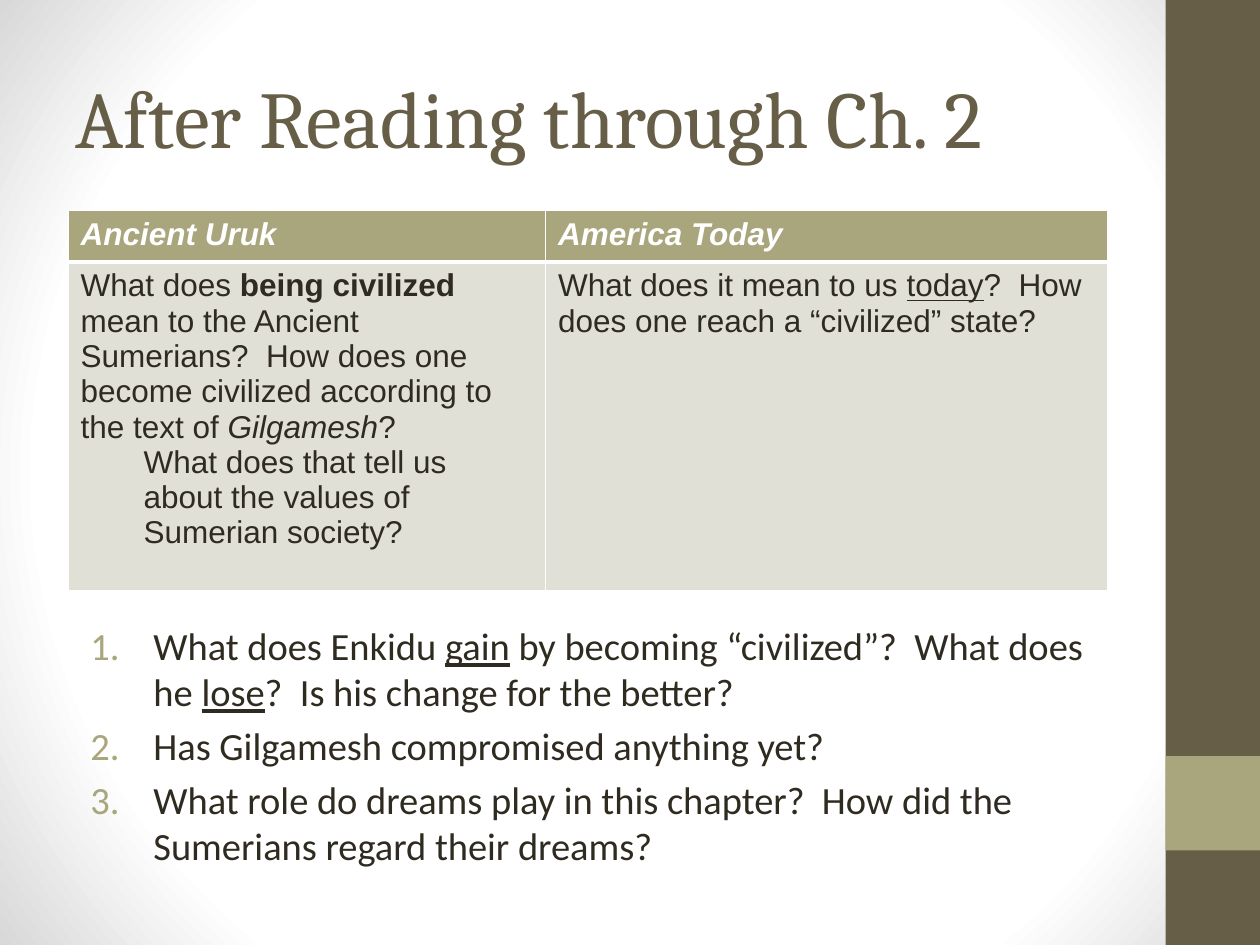
"""Build the reading-questions slide: a comparison table above a numbered list."""
from lxml import etree
from pptx import Presentation
from pptx.dml.color import RGBColor
from pptx.enum.shapes import MSO_SHAPE
from pptx.enum.text import MSO_ANCHOR
from pptx.oxml import parse_xml
from pptx.oxml.ns import nsdecls, qn
from pptx.util import Inches, Pt

RECTANGLE = MSO_SHAPE.RECTANGLE
MIDDLE = MSO_ANCHOR.MIDDLE

COLORS = {"brown": "675E47", "olive": "A9A57C", "pale": "E1E0D6",
          "ink": "2F2B20", "white": "FFFFFF", "gray": "D8D8D8"}

BANDS = [(0, 7.5, "brown"), (6, 0.75, "olive")]
BAND_LEFT, BAND_WIDTH = 9.25, 0.75
BACKGROUND_STOPS = [(0, "white"), (75, "white"), (100, "gray")]

TITLE = "After Reading through Ch. 2"
TITLE_BOX = (0.5, 0.3, 8.33, 1.25)
TITLE_FORMAT = {"size": Pt(46), "name": "Cambria"}

BOLD, ITALIC, UNDERLINE = {"bold": True}, {"italic": True}, {"underline": True}
HEADINGS = ["Ancient Uruk", "America Today"]
QUESTIONS = [
    [
        (0, [("What does ", {}), ("being civilized ", BOLD),
             ("mean to the Ancient Sumerians?  How does one become civilized "
              "according to the text of ", {}), ("Gilgamesh", ITALIC), ("?", {})]),
        (0.5, [("What does that tell us about the values of Sumerian society?", {})]),
    ],
    [
        (0, [("What does it mean to us ", {}), ("today", UNDERLINE),
             ("?  How does one reach a “civilized” state?", {})]),
    ],
]
TABLE_LEFT, TABLE_TOP = 0.54, 1.67
COLUMN_WIDTHS, ROW_HEIGHTS = [3.79, 4.46], [0.41, 2.61]
CELL_FORMAT = {"size": Pt(18), "name": "Arial"}
HEADING_FORMAT = CELL_FORMAT | BOLD | ITALIC

LIST_ITEMS = [
    [("What does Enkidu ", {}), ("gain", UNDERLINE),
     (" by becoming “civilized”?  What does he ", {}), ("lose", UNDERLINE),
     ("?  Is his change for the better?", {})],
    [("Has Gilgamesh compromised anything yet?", {})],
    [("What role do dreams play in this chapter?  How did the Sumerians "
      "regard their dreams?", {})],
]
LIST_BOX = (0.5, 4.89, 8.33, 2.36)
LIST_FORMAT = {"size": Pt(22), "name": "Calibri"}
LIST_INDENT, NUMBER_HANG = 0.62, 0.5


def rgb(color):
    return RGBColor.from_string(COLORS[color])


def solid_fill(parent, color, tag="a:solidFill"):
    fill = etree.SubElement(parent, qn(tag))
    etree.SubElement(fill, qn("a:srgbClr"), val=COLORS[color])


def write_spans(para, spans, base, color):
    for text, emphasis in spans:
        span = para.add_run()
        span.text = text
        span.font.color.rgb = rgb(color)
        for name, value in (base | emphasis).items():
            setattr(span.font, name, value)


def paint_background(page):
    page.background.fill.solid()
    gradient = parse_xml(
        f'<a:gradFill rotWithShape="1" {nsdecls("a")}><a:gsLst/><a:path path="circle">'
        '<a:fillToRect l="50000" t="50000" r="50000" b="50000"/></a:path></a:gradFill>')
    for percent, color in BACKGROUND_STOPS:
        stop = etree.SubElement(gradient[0], qn("a:gs"), pos=str(percent * 1000))
        etree.SubElement(stop, qn("a:srgbClr"), val=COLORS[color])
    solid = page.background._cSld.find(".//" + qn("a:solidFill"))
    solid.getparent().replace(solid, gradient)


def add_bands(page):
    for top, height, color in BANDS:
        band = page.shapes.add_shape(RECTANGLE, Inches(BAND_LEFT), Inches(top),
                                     Inches(BAND_WIDTH), Inches(height))
        band.shadow.inherit = False
        band.fill.solid()
        band.fill.fore_color.rgb = rgb(color)
        band.line.fill.background()


def add_text_frame(page, bounds):
    frame = page.shapes.add_textbox(*map(Inches, bounds)).text_frame
    frame.word_wrap = True
    return frame


def style_cell(cell, color, edge_widths):
    properties = cell._tc.get_or_add_tcPr()
    for edge, points in edge_widths.items():
        line = etree.SubElement(properties, qn(f"a:ln{edge}"), w=str(Pt(points)))
        solid_fill(line, "white")
    cell.fill.solid()
    cell.fill.fore_color.rgb = rgb(color)


def add_table(page):
    table = page.shapes.add_table(
        len(ROW_HEIGHTS), len(COLUMN_WIDTHS), Inches(TABLE_LEFT), Inches(TABLE_TOP),
        Inches(sum(COLUMN_WIDTHS)), Inches(sum(ROW_HEIGHTS))).table
    for row, height in zip(table.rows, ROW_HEIGHTS):
        row.height = Inches(height)
    for index, width in enumerate(COLUMN_WIDTHS):
        table.columns[index].width = Inches(width)
        heading, body = table.cell(0, index), table.cell(1, index)
        style_cell(heading, "olive", {"L": 1, "R": 1, "T": 1, "B": 3})
        style_cell(body, "pale", {"L": 1, "R": 1, "T": 3, "B": 1})
        write_spans(heading.text_frame.paragraphs[0], [(HEADINGS[index], {})],
                    HEADING_FORMAT, "white")
        for number, (indent, spans) in enumerate(QUESTIONS[index]):
            frame = body.text_frame
            para = frame.add_paragraph() if number else frame.paragraphs[0]
            para._p.get_or_add_pPr().set("marL", str(Inches(indent)))
            write_spans(para, spans, CELL_FORMAT, "ink")


def add_numbered_list(page):
    frame = add_text_frame(page, LIST_BOX)
    for number, spans in enumerate(LIST_ITEMS):
        para = frame.add_paragraph() if number else frame.paragraphs[0]
        para.space_after = Pt(4.4)
        properties = para._p.get_or_add_pPr()
        properties.set("marL", str(Inches(LIST_INDENT)))
        properties.set("indent", str(-Inches(NUMBER_HANG)))
        solid_fill(properties, "olive", "a:buClr")
        etree.SubElement(properties, qn("a:buFont"), typeface=LIST_FORMAT["name"])
        etree.SubElement(properties, qn("a:buAutoNum"), type="arabicPeriod")
        write_spans(para, spans, LIST_FORMAT, "ink")


def main():
    deck = Presentation()
    deck.slide_width, deck.slide_height = Inches(10), Inches(7.5)
    page = deck.slides.add_slide(deck.slide_layouts[6])
    paint_background(page)
    add_bands(page)
    title = add_text_frame(page, TITLE_BOX)
    title.vertical_anchor = MIDDLE
    write_spans(title.paragraphs[0], [(TITLE, {})], TITLE_FORMAT, "brown")
    add_numbered_list(page)
    add_table(page)
    deck.save("out.pptx")


if __name__ == "__main__":
    main()
